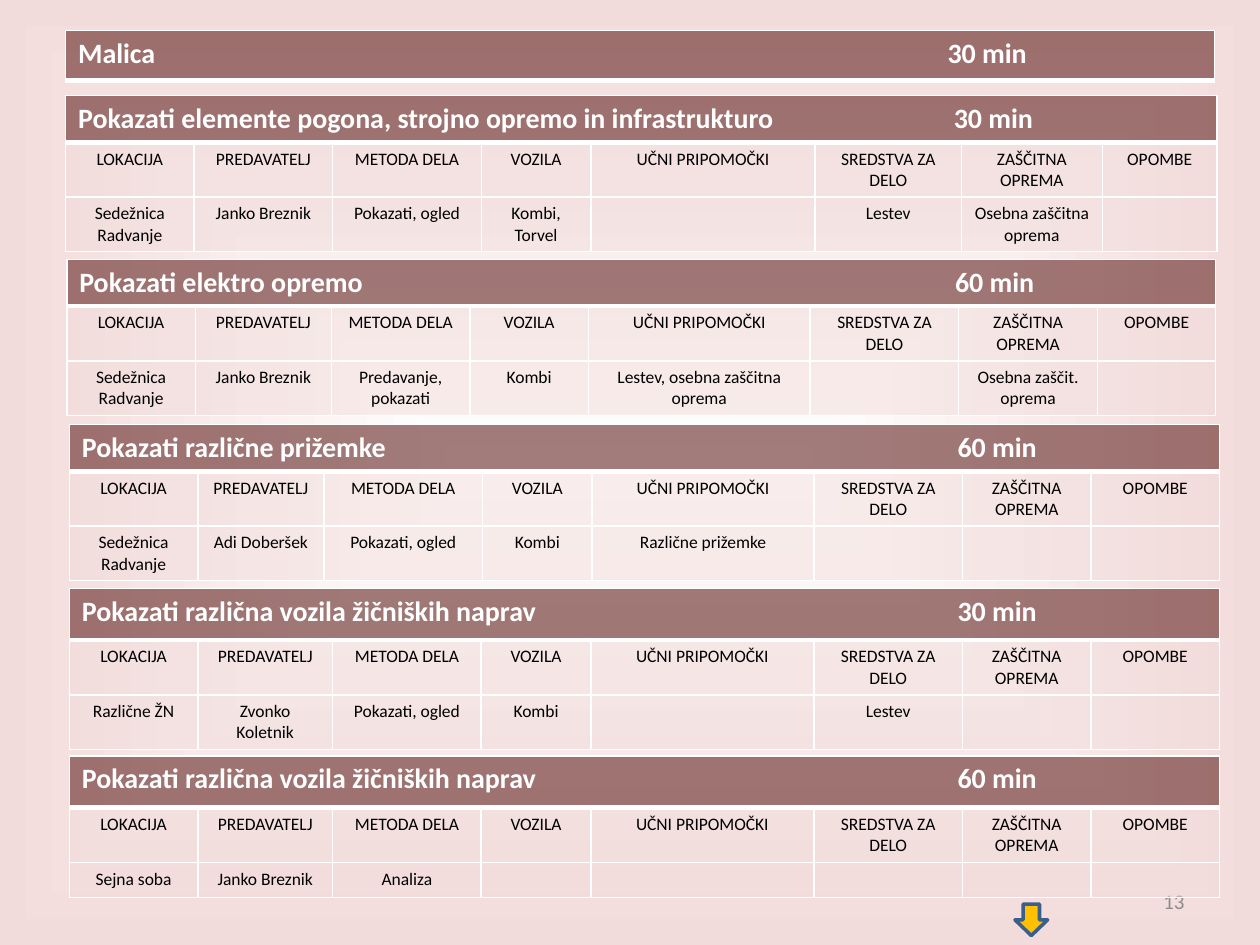
import dataclasses

import lxml.etree
import pptx
import pptx.dml.color
import pptx.enum.shapes
import pptx.enum.text
import pptx.oxml.ns
import pptx.util

Inches = pptx.util.Inches
Pt = pptx.util.Pt
qn = pptx.oxml.ns.qn
ALIGN = pptx.enum.text.PP_ALIGN

FONT = "Calibri"
WHITE, BLACK, GREY = "FFFFFF", "000000", "8C8C8C"
MAROON, ROSE = "632523", "F2DCDB"
AMBER, BLUE = "FFC000", "3A5F8C"
HEADINGS = ["LOKACIJA", "PREDAVATELJ", "METODA DELA", "VOZILA", "UČNI PRIPOMOČKI",
            "SREDSTVA ZA DELO", "ZAŠČITNA OPREMA", "OPOMBE"]
BANNER_FONT = {"size": Pt(16), "bold": True, "name": FONT}
BODY_FONT = {"size": Pt(10), "bold": False, "name": FONT}


@dataclasses.dataclass
class Activity:
    topic: str
    duration: str
    left: float
    top: float
    columns: list[float]
    rows: list[float]
    details: list[str] = dataclasses.field(default_factory=list)
    duration_tab: float = 6.95


LATE_COLUMNS = [1.02, 1.07, 1.18, 0.87, 1.77, 1.18, 1.02, 1.02]
ACTIVITIES = [
    Activity("Pokazati elemente pogona, strojno opremo in infrastrukturo", "30 min",
             0.52, 0.76, [1.02, 1.1, 1.18, 0.87, 1.78, 1.16, 1.12, 0.91],
             [0.37, 0.43, 0.43],
             ["Sedežnica Radvanje", "Janko Breznik", "Pokazati, ogled", "Kombi, Torvel",
              "", "Lestev", "Osebna zaščitna oprema", ""]),
    Activity("Pokazati elektro opremo", "60 min",
             0.53, 2.06, [1.02, 1.08, 1.1, 0.94, 1.76, 1.18, 1.1, 0.94],
             [0.37, 0.43, 0.43],
             ["Sedežnica Radvanje", "Janko Breznik", "Predavanje,\npokazati", "Kombi",
              "Lestev, osebna zaščitna oprema", "", "Osebna zaščit. oprema", ""]),
    Activity("Pokazati različne prižemke", "60 min",
             0.55, 3.37, [1.02, 1, 1.26, 0.87, 1.76, 1.18, 1.02, 1.02],
             [0.37, 0.43, 0.43],
             ["Sedežnica Radvanje", "Adi Doberšek", "Pokazati, ogled", "Kombi",
              "Različne prižemke", "", "", ""]),
    Activity("Pokazati različna vozila žičniških naprav", "30 min",
             0.55, 4.67, LATE_COLUMNS, [0.41, 0.43, 0.43],
             ["Različne ŽN", "Zvonko Koletnik", "Pokazati, ogled", "Kombi",
              "", "Lestev", "", ""]),
    Activity("Malica", "30 min", 0.52, 0.24, [9.12], [0.4], duration_tab=6.9),
    Activity("Pokazati različna vozila žičniških naprav", "60 min",
             0.55, 6, LATE_COLUMNS, [0.41, 0.43, 0.28],
             ["Sejna soba", "Janko Breznik", "Analiza", "", "", "", "", ""]),
]


def rgb(value: str) -> pptx.dml.color.RGBColor:
    return pptx.dml.color.RGBColor.from_string(value)


def format_font(font, values: dict, colour: str) -> None:
    for key, value in values.items():
        setattr(font, key, value)
    font.color.rgb = rgb(colour)


def paint_cell(cell, colour: str, opacity: int, top: float, bottom: float) -> None:
    """Translucent fill with white borders; top and bottom widths in points."""
    cell.fill.solid()
    cell.fill.fore_color.rgb = rgb(colour)
    properties = cell._tc.tcPr
    shade = properties.find(".//" + qn("a:srgbClr"))
    lxml.etree.SubElement(shade, qn("a:alpha"), val=str(opacity * 1000))
    widths = {"a:lnL": 1, "a:lnR": 1, "a:lnT": top, "a:lnB": bottom}
    for position, (side, width) in enumerate(widths.items()):
        line = lxml.etree.Element(qn(side), w=str(Pt(width)))
        fill = lxml.etree.SubElement(line, qn("a:solidFill"))
        lxml.etree.SubElement(fill, qn("a:srgbClr"), val=WHITE)
        properties.insert(position, line)


def write_cell(cell, text: str, font: dict, colour: str, align) -> None:
    cell.text_frame.text = text
    for paragraph in cell.text_frame.paragraphs:
        paragraph.alignment = align
        for run in paragraph.runs:
            format_font(run.font, font, colour)
        if not paragraph.runs:
            # Keeps empty cells from stretching their row
            lxml.etree.SubElement(paragraph._p, qn("a:endParaRPr"),
                                  sz=str(int(font["size"].pt * 100)))


def add_tab_stop(paragraph, position: float) -> None:
    tabs = lxml.etree.SubElement(paragraph._p.get_or_add_pPr(), qn("a:tabLst"))
    lxml.etree.SubElement(tabs, qn("a:tab"), pos=str(Inches(position)), algn="l")


def draw_activity(slide, activity: Activity) -> None:
    table = slide.shapes.add_table(
        len(activity.rows), len(activity.columns),
        Inches(activity.left), Inches(activity.top),
        Inches(sum(activity.columns)), Inches(sum(activity.rows))).table
    for column, width in zip(table.columns, activity.columns):
        column.width = Inches(width)
    for row, height in zip(table.rows, activity.rows):
        row.height = Inches(height)

    # Banner with topic and duration
    banner = table.cell(0, 0)
    if len(activity.columns) > 1:
        banner.merge(table.cell(0, len(activity.columns) - 1))
    for cell in table.rows[0].cells:
        paint_cell(cell, MAROON, 60, 1, 3)
    write_cell(banner, f"{activity.topic}\t{activity.duration}",
               BANNER_FONT, WHITE, ALIGN.LEFT)
    add_tab_stop(banner.text_frame.paragraphs[0], activity.duration_tab)

    # Headings and details
    if activity.details:
        for row, texts in enumerate([HEADINGS, activity.details], start=1):
            for column, text in enumerate(texts):
                cell = table.cell(row, column)
                paint_cell(cell, ROSE, 50, 3 if row == 1 else 1, 1)
                write_cell(cell, text, BODY_FONT, BLACK, ALIGN.CENTER)


def draw_background(slide) -> None:
    fill = slide.background.fill
    fill.gradient()
    for stop, position, colour in zip(fill.gradient_stops, (0, 1), (WHITE, ROSE)):
        stop.position = position
        stop.color.rgb = rgb(colour)
    gradient = slide._element.find(".//" + qn("a:gradFill"))
    linear = gradient.find(qn("a:lin"))
    shading = lxml.etree.Element(qn("a:path"), {"path": "shape"})
    lxml.etree.SubElement(shading, qn("a:fillToRect"),
                          {side: "50000" for side in "ltrb"})
    gradient.replace(linear, shading)


def draw_page_number(slide, number: str) -> None:
    frame = slide.shapes.add_textbox(
        Inches(7.17), Inches(6.95), Inches(2.33), Inches(0.4)).text_frame
    frame.word_wrap = True
    frame.vertical_anchor = pptx.enum.text.MSO_ANCHOR.MIDDLE
    frame.text = number
    frame.paragraphs[0].alignment = ALIGN.RIGHT
    format_font(frame.paragraphs[0].runs[0].font, {"size": Pt(12), "name": FONT}, GREY)


def draw_continue_arrow(slide) -> None:
    arrow = slide.shapes.add_shape(
        pptx.enum.shapes.MSO_SHAPE.RIGHT_ARROW,
        Inches(8.06), Inches(7.17), Inches(0.25), Inches(0.26))
    arrow.rotation = 90
    arrow.shadow.inherit = False
    arrow.fill.solid()
    arrow.fill.fore_color.rgb = rgb(AMBER)
    arrow.line.color.rgb = rgb(BLUE)
    arrow.line.width = Pt(2)


def main() -> None:
    presentation = pptx.Presentation()
    presentation.slide_width = Inches(10)
    presentation.slide_height = Inches(7.5)
    slide = presentation.slides.add_slide(presentation.slide_layouts[6])
    draw_background(slide)
    draw_page_number(slide, "13")
    for activity in ACTIVITIES:
        draw_activity(slide, activity)
    draw_continue_arrow(slide)
    presentation.save("out.pptx")


if __name__ == "__main__":
    main()
